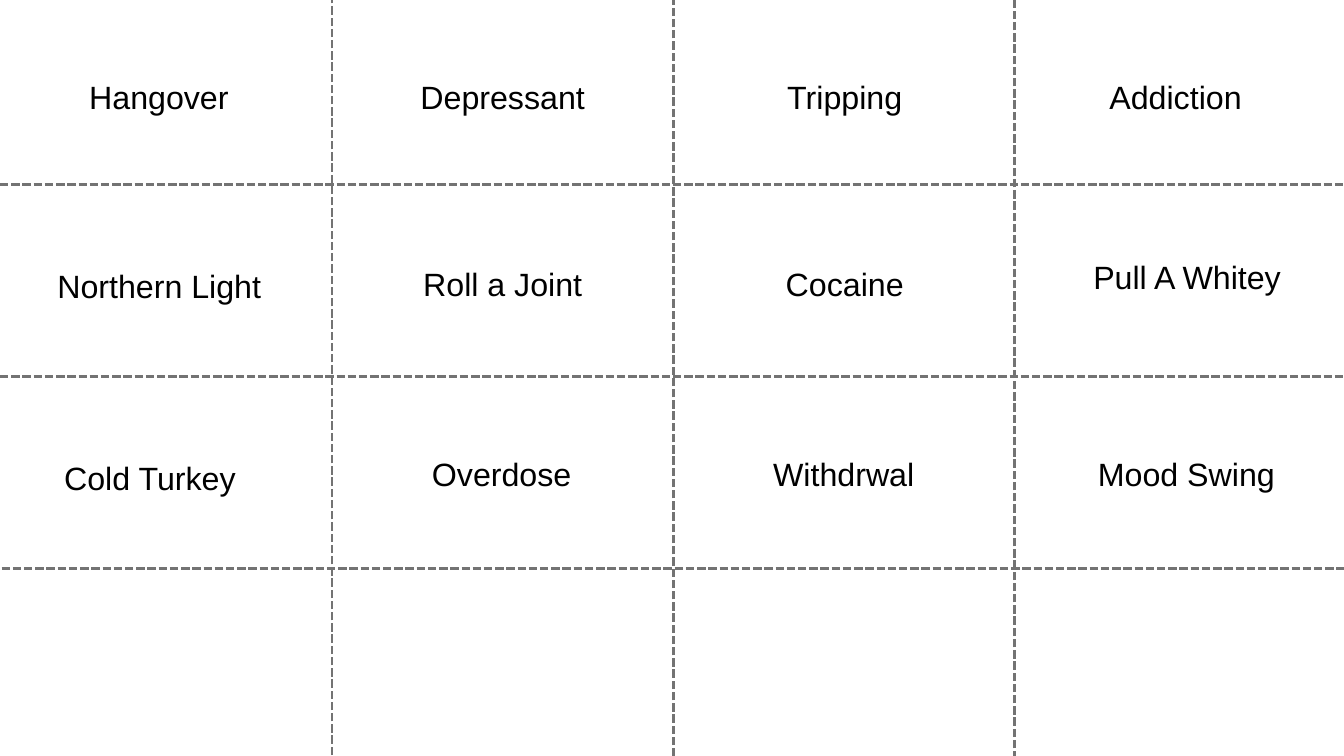
"""Build a cut-out sheet of word cards separated by dashed lines."""
from lxml import etree
from pptx import Presentation
from pptx.dml.color import RGBColor
from pptx.enum.dml import MSO_LINE
from pptx.enum.shapes import MSO_CONNECTOR
from pptx.enum.text import MSO_AUTO_SIZE, PP_ALIGN
from pptx.oxml.ns import qn
from pptx.util import Inches, Pt

STRAIGHT = MSO_CONNECTOR.STRAIGHT
DASH = MSO_LINE.SQUARE_DOT
CENTER = PP_ALIGN.CENTER
GROW = MSO_AUTO_SIZE.SHAPE_TO_FIT_TEXT

COLORS = {"background": "FFFFFF", "cut": "737373", "word": "000000"}
CUT_LENGTH = 20.62
CARD_HEIGHT = 0.64
ROW_CUTS = [(0, 5.6), (0, 2.75), (-0.31, 8.46)]
COLUMN_CUTS = [(10.02, 15.93), (15.1, 16.31), (4.94, 15.91)]
CARDS = [
    ("Hangover", 1.28, 1.05, 2.17),
    ("Depressant", 6.21, 1.05, 2.54),
    ("Tripping", 11.58, 1.05, 1.98),
    ("Addiction ", 16.43, 1.05, 2.26),
    ("Northern Light", 0.7, 3.87, 3.34),
    ("Roll a Joint", 6.24, 3.84, 2.48),
    ("Cocaine", 11.68, 3.84, 1.78),
    ("Pull A Whitey", 16.15, 3.73, 3.03),
    ("Cold Turkey", 0.85, 6.72, 2.76),
    ("Overdose", 6.42, 6.67, 2.09),
    ("Withdrwal", 11.33, 6.67, 2.45),
    ("Mood Swing", 16.32, 6.67, 2.67),
]
FRAME_FORMAT = {
    "margin_left": 0, "margin_top": 0, "margin_right": 0, "margin_bottom": 0,
    "word_wrap": True, "auto_size": GROW,
}
PARAGRAPH_FORMAT = {"alignment": CENTER, "line_spacing": Pt(48.3)}
FONT_FORMAT = {"name": "Arial", "size": Pt(34.5)}


def apply_format(target, values):
    """Set every attribute in values on the target."""
    for name, value in values.items():
        setattr(target, name, value)


def add_cut(slide, start, end):
    """Draw one dashed cutting line."""
    cut = slide.shapes.add_connector(STRAIGHT, *map(Inches, start + end))
    cut.line.color.rgb = RGBColor.from_string(COLORS["cut"])
    apply_format(cut.line, {"width": Pt(3), "dash_style": DASH})
    etree.SubElement(cut._element.spPr, qn("a:effectLst"))


def add_card(slide, word, left, top, width):
    """Write one word centred on its card."""
    card = slide.shapes.add_textbox(*map(Inches, (left, top, width, CARD_HEIGHT)))
    apply_format(card.text_frame, FRAME_FORMAT)
    paragraph = card.text_frame.paragraphs[0]
    apply_format(paragraph, PARAGRAPH_FORMAT)
    run = paragraph.add_run()
    run.text = word
    apply_format(run.font, FONT_FORMAT)
    run.font.color.rgb = RGBColor.from_string(COLORS["word"])


def main():
    """Build and save the sheet."""
    deck = Presentation()
    apply_format(deck, {"slide_width": Inches(20), "slide_height": Inches(11.25)})
    slide = deck.slides.add_slide(deck.slide_layouts[6])
    slide.background.fill.solid()
    slide.background.fill.fore_color.rgb = RGBColor.from_string(COLORS["background"])
    for left, y in ROW_CUTS:
        add_cut(slide, (left, y), (left + CUT_LENGTH, y))
    for x, bottom in COLUMN_CUTS:
        add_cut(slide, (x, bottom), (x, bottom - CUT_LENGTH))
    for card in CARDS:
        add_card(slide, *card)
    deck.save("out.pptx")


if __name__ == "__main__":
    main()
